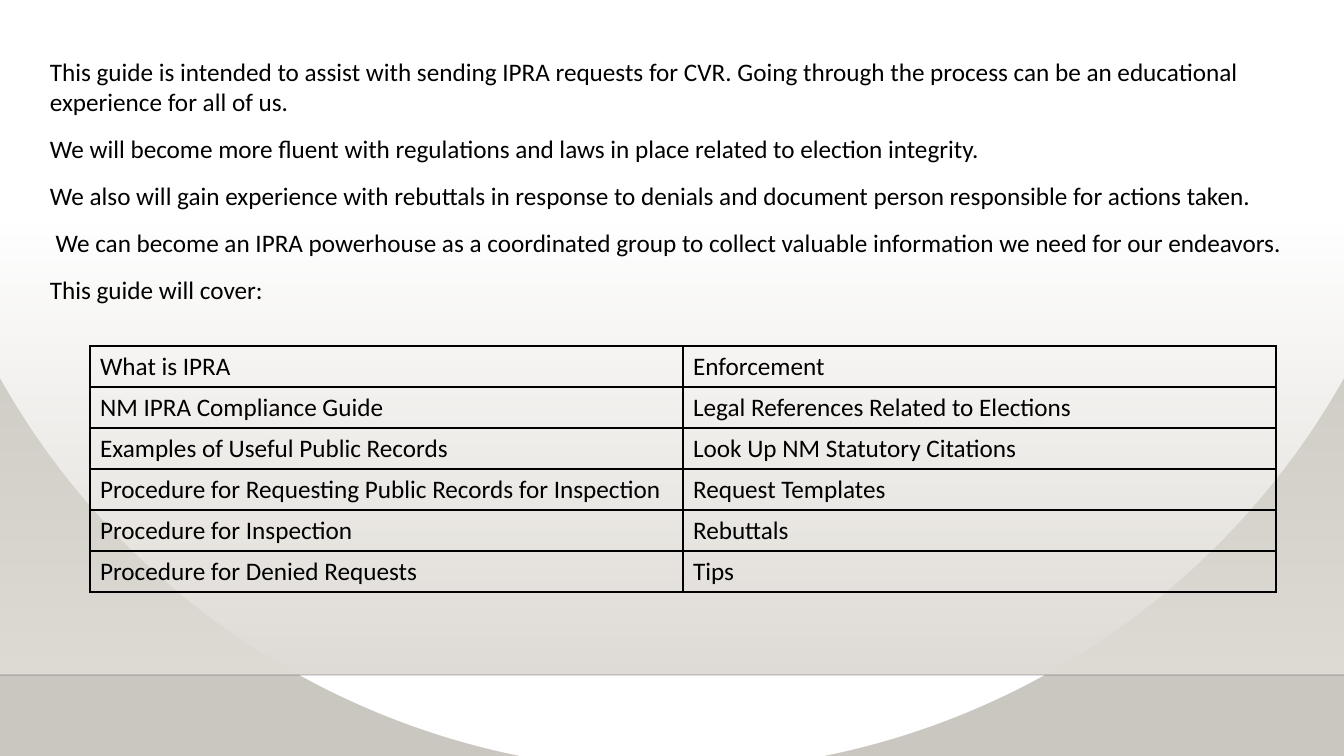
from dataclasses import dataclass

from lxml.etree import SubElement
from pptx import Presentation
from pptx.dml.color import RGBColor
from pptx.enum.shapes import MSO_CONNECTOR, MSO_SHAPE
from pptx.oxml.ns import qn
from pptx.util import Emu, Pt

EMU_PER_PX = 914400 / 100.8
SLIDE_WIDTH, SLIDE_HEIGHT = 1344, 756
FLOOR_TOP = 675


def px(length):
    return Emu(round(length * EMU_PER_PX))


@dataclass(frozen=True)
class Theme:
    font: str = "Calibri"
    text_size: int = 18
    paragraph_gap: int = 12
    line_width: int = 1
    text: str = "000000"
    floor_line: str = "000001"
    floor_line_opacity: int = 20
    spotlight: str = "FFFFFF"
    surround: str = "CAC7C1"
    wall: str = "DFDBD5"


def add_color(parent, color, opacity=100):
    element = SubElement(parent, qn("a:srgbClr"), val=color)
    if opacity < 100:
        SubElement(element, qn("a:alpha"), val=str(opacity * 1000))


class SlideBuilder:
    def __init__(self, slide, theme):
        self.slide = slide
        self.theme = theme

    def set_stops(self, gradient, stops):
        for child in list(gradient):
            gradient.remove(child)
        stop_list = SubElement(gradient, qn("a:gsLst"))
        for position, color, opacity in stops:
            stop = SubElement(stop_list, qn("a:gs"), pos=str(position * 1000))
            add_color(stop, color, opacity)

    def radial_background(self, inner, outer):
        self.slide.background.fill.gradient()
        gradient = self.slide.element.find(".//" + qn("p:bgPr")).find(qn("a:gradFill"))
        self.set_stops(gradient, [(100, inner, 100), (100, outer, 100)])
        circle = SubElement(gradient, qn("a:path"), {"path": "circle"})
        SubElement(circle, qn("a:fillToRect"), l="43000", t="0", r="43000", b="100000")

    def fading_rectangle(self, left, top, width, height, color):
        shape = self.slide.shapes.add_shape(
            MSO_SHAPE.RECTANGLE, px(left), px(top), px(width), px(height))
        shape.shadow.inherit = False
        shape.line.fill.background()
        shape.fill.gradient()
        gradient = shape.element.spPr.find(qn("a:gradFill"))
        self.set_stops(gradient, [(0, color, 0), (100, color, 100)])
        SubElement(gradient, qn("a:lin"), ang="5400000", scaled="0")

    def horizontal_line(self, left, right, y, color, opacity):
        connector = self.slide.shapes.add_connector(
            MSO_CONNECTOR.STRAIGHT, px(left), px(y), px(right), px(y))
        connector.line.width = Pt(self.theme.line_width)
        connector.line.color.rgb = RGBColor.from_string(color)
        color_element = connector.line._ln.find(".//" + qn("a:srgbClr"))
        SubElement(color_element, qn("a:alpha"), val=str(opacity * 1000))
        SubElement(connector.element.spPr, qn("a:effectLst"))

    def style_paragraph(self, paragraph):
        paragraph.font.name = self.theme.font
        paragraph.font.size = Pt(self.theme.text_size)
        paragraph.font.color.rgb = RGBColor.from_string(self.theme.text)

    def paragraphs(self, left, top, width, height, texts):
        box = self.slide.shapes.add_textbox(px(left), px(top), px(width), px(height))
        frame = box.text_frame
        frame.word_wrap = True
        frame.text = "\n".join(texts)
        for paragraph in frame.paragraphs:
            paragraph.space_after = Pt(self.theme.paragraph_gap)
            self.style_paragraph(paragraph)

    def border_cell(self, cell):
        properties = cell._tc.get_or_add_tcPr()
        for side in ("lnL", "lnR", "lnT", "lnB"):
            border = SubElement(
                properties, qn("a:" + side), w=str(Pt(self.theme.line_width)))
            add_color(SubElement(border, qn("a:solidFill")), self.theme.text)

    def table(self, left, top, column_width, row_height, rows):
        column_count = len(rows[0])
        table = self.slide.shapes.add_table(
            len(rows), column_count, px(left), px(top),
            px(column_width * column_count), px(row_height * len(rows))).table
        table.first_row = False
        table.horz_banding = False
        for row_index, row in enumerate(rows):
            for column_index, text in enumerate(row):
                cell = table.cell(row_index, column_index)
                cell.text = text
                self.style_paragraph(cell.text_frame.paragraphs[0])
                self.border_cell(cell)
                cell.fill.background()


INTRODUCTION = [
    "This guide is intended to assist with sending IPRA requests for CVR. "
    "Going through the process can be an educational experience for all of us.",
    "We will become more fluent with regulations and laws in place related to "
    "election integrity.",
    "We also will gain experience with rebuttals in response to denials and "
    "document person responsible for actions taken.",
    " We can become an IPRA powerhouse as a coordinated group to collect "
    "valuable information we need for our endeavors.",
    "This guide will cover:",
]

TOPICS = [
    ("What is IPRA", "Enforcement"),
    ("NM IPRA Compliance Guide", "Legal References Related to Elections"),
    ("Examples of Useful Public Records", "Look Up NM Statutory Citations"),
    ("Procedure for Requesting Public Records for Inspection", "Request Templates"),
    ("Procedure for Inspection", "Rebuttals"),
    ("Procedure for Denied Requests", "Tips"),
]


def main():
    presentation = Presentation()
    presentation.slide_width = px(SLIDE_WIDTH)
    presentation.slide_height = px(SLIDE_HEIGHT)
    blank_layout = presentation.slide_layouts[6]
    theme = Theme()
    builder = SlideBuilder(presentation.slides.add_slide(blank_layout), theme)

    builder.radial_background(theme.spotlight, theme.surround)
    wall_top = 223
    builder.fading_rectangle(0, wall_top, SLIDE_WIDTH, FLOOR_TOP - wall_top, theme.wall)
    builder.horizontal_line(
        0, SLIDE_WIDTH, FLOOR_TOP, theme.floor_line, theme.floor_line_opacity)
    builder.paragraphs(40, 51, 1262, 261, INTRODUCTION)
    builder.table(90, 346, 593, 41, TOPICS)
    presentation.save("out.pptx")


if __name__ == "__main__":
    main()
